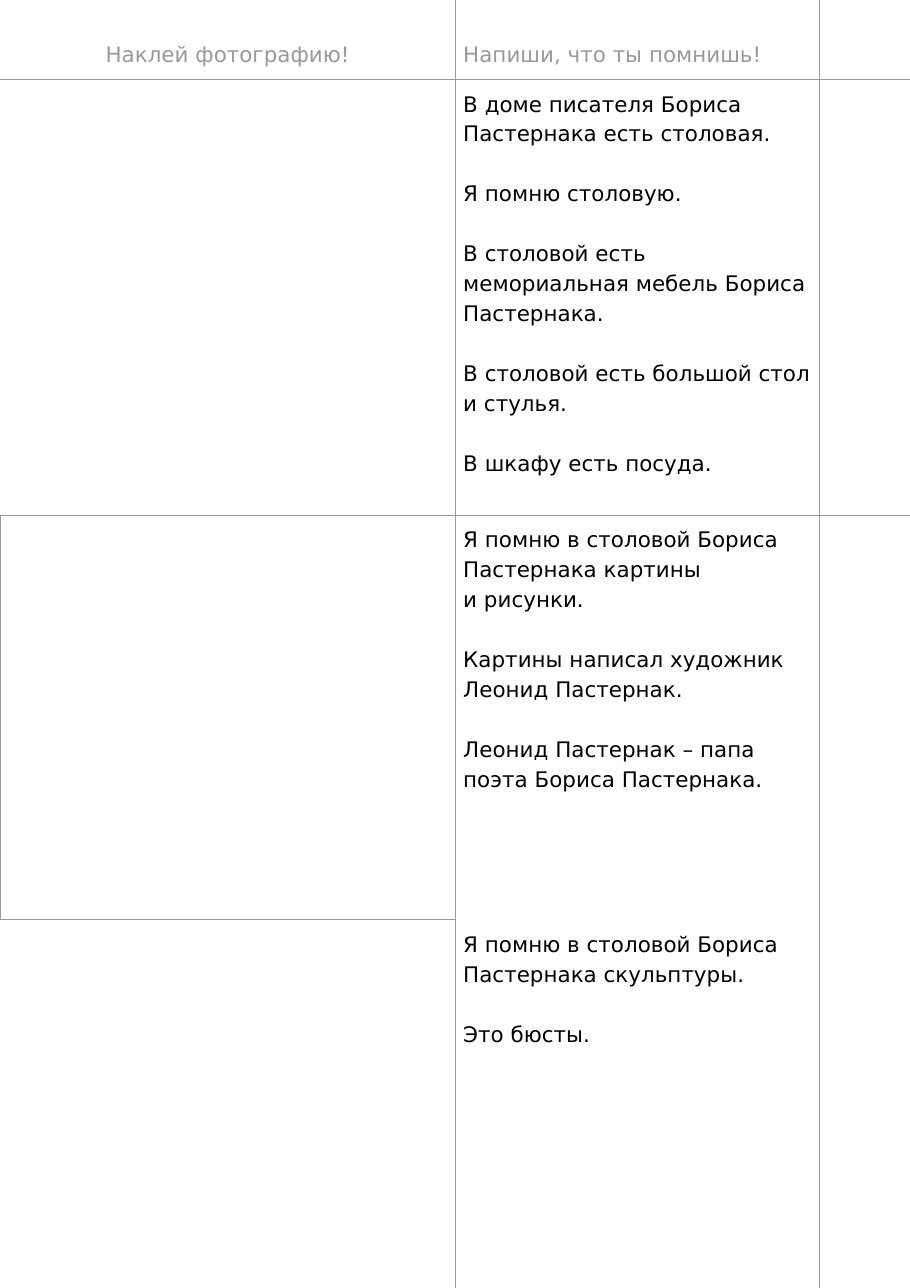
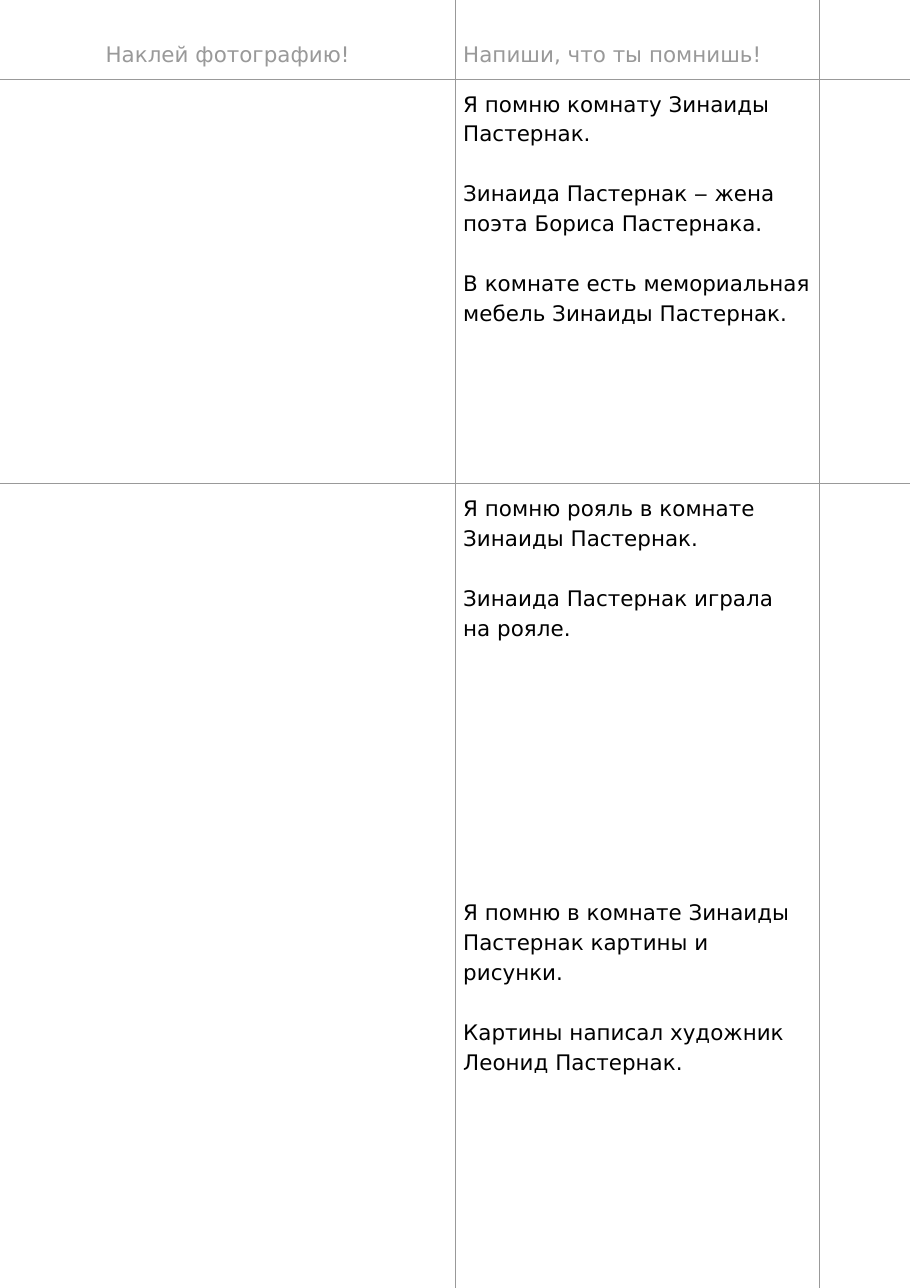
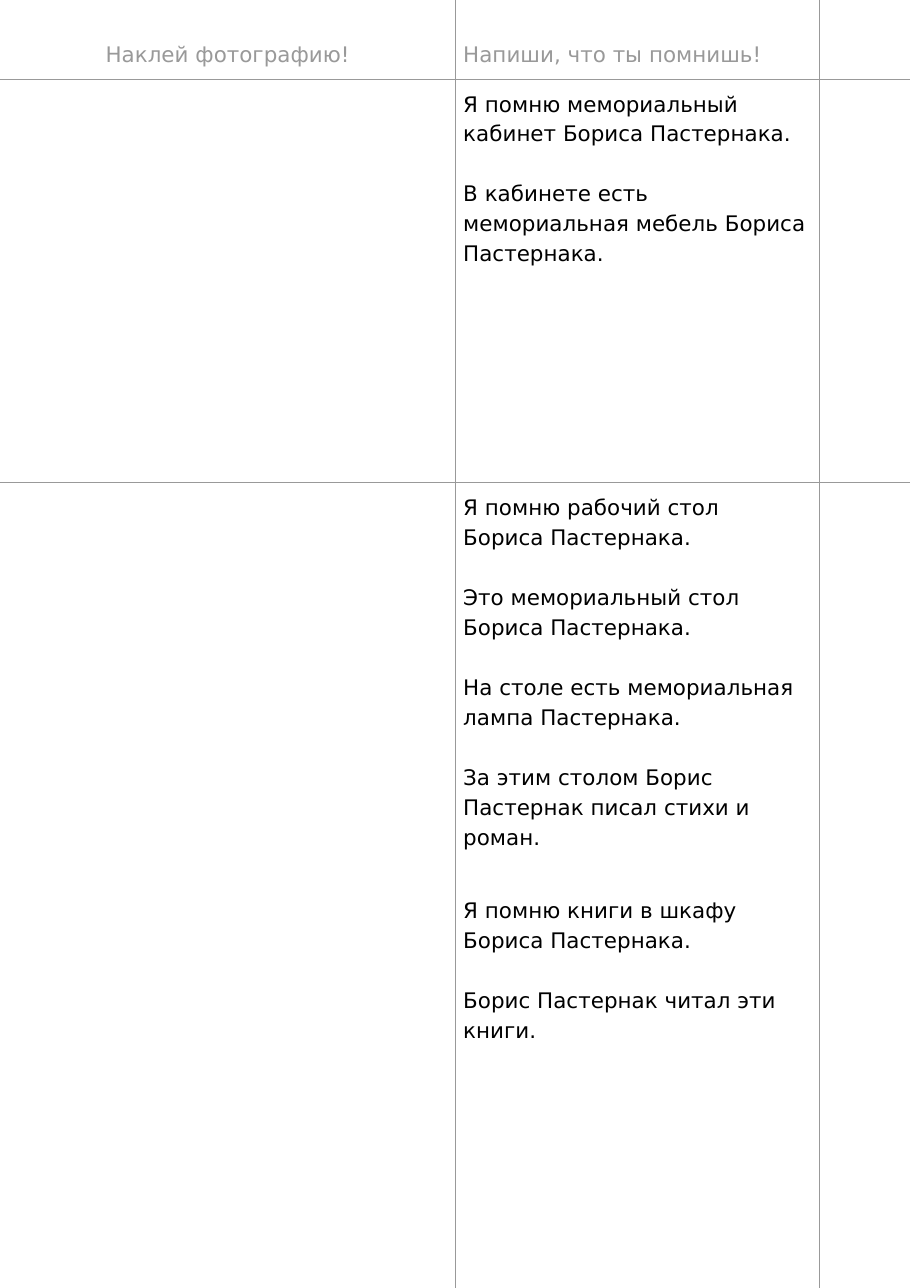
from dataclasses import dataclass

from lxml.etree import SubElement
from pptx import Presentation
from pptx.dml.color import RGBColor
from pptx.enum.text import PP_ALIGN
from pptx.oxml.ns import qn
from pptx.util import Cm, Pt


@dataclass(frozen=True)
class Theme:
    font: str = "DejaVu Sans"
    size: Pt = Pt(14)
    leading: Pt = Pt(19.6)
    ink: str = "000000"
    grey: str = "999999"
    paper: str = "FFFFFF"
    rule: Pt = Pt(0.53)
    inset: Cm = Cm(0.18)


THEME = Theme()
PAGE_W, PAGE_H = Cm(20.98), Cm(29.69)
PHOTO_W, NOTES_W = Cm(10.5), Cm(8.4)
HEADER_H = Cm(1.83)
HEADINGS = ("Наклей фотографию!", "Напиши, что ты помнишь!")

# heights: the first two note rows; the third runs to the foot of the page.
# framed: whether the second photo cell has a full frame.
PAGES = [
    {
        "heights": (Cm(10.05), Cm(9.32)),
        "framed": True,
        "notes": [
            ["В доме писателя Бориса Пастернака есть столовая.",
             "Я помню столовую.",
             "В столовой есть мемориальная мебель Бориса Пастернака.",
             "В столовой есть большой стол\nи стулья.",
             "В шкафу есть посуда."],
            ["Я помню в столовой Бориса Пастернака картины\nи рисунки.",
             "Картины написал художник Леонид Пастернак.",
             "Леонид Пастернак – папа поэта Бориса Пастернака."],
            ["Я помню в столовой Бориса Пастернака скульптуры.",
             "Это бюсты."],
        ],
    },
    {
        "heights": (Cm(9.32), Cm(9.32)),
        "framed": False,
        "notes": [
            ["Я помню комнату Зинаиды Пастернак.",
             "Зинаида Пастернак ‒ жена поэта Бориса Пастернака.",
             "В комнате есть мемориальная мебель Зинаиды Пастернак."],
            ["Я помню рояль в комнате\nЗинаиды Пастернак.",
             "Зинаида Пастернак играла\nна рояле."],
            ["Я помню в комнате Зинаиды Пастернак картины и рисунки.",
             "Картины написал художник Леонид Пастернак."],
        ],
    },
    {
        "heights": (Cm(9.3), Cm(9.3)),
        "framed": False,
        "notes": [
            ["Я помню мемориальный кабинет Бориса Пастернака.",
             "В кабинете есть мемориальная мебель Бориса Пастернака."],
            ["Я помню рабочий стол\nБориса Пастернака.",
             "Это мемориальный стол\nБориса Пастернака.",
             "На столе есть мемориальная лампа Пастернака.",
             "За этим столом Борис Пастернак писал стихи и роман."],
            ["Я помню книги в шкафу Бориса Пастернака.",
             "Борис Пастернак читал эти книги."],
        ],
    },
]


def ruled_sides(row, col, framed):
    """Return the sides of a cell that carry a grey rule."""
    sides = set()
    if col > 0:
        sides.add("L")
    if col < 2:
        sides.add("R")
    if row in (1, 2):
        sides.add("T")
    if row in (0, 1):
        sides.add("B")
    if framed and col == 0:
        if row == 2:
            sides |= {"L", "B"}
        elif row == 3:
            sides.add("T")
    return sides


def style_cell(cell, sides):
    cell.fill.solid()
    cell.fill.fore_color.rgb = RGBColor.from_string(THEME.paper)
    cell.margin_left = cell.margin_right = THEME.inset
    cell.margin_top = cell.margin_bottom = THEME.inset
    tcPr = cell._tc.get_or_add_tcPr()
    for i, side in enumerate("LRTB"):
        ln = SubElement(tcPr, qn(f"a:ln{side}"))
        if side in sides:
            ln.set("w", str(int(THEME.rule)))
            fill = SubElement(ln, qn("a:solidFill"))
            SubElement(fill, qn("a:srgbClr")).set("val", THEME.grey)
        else:
            SubElement(ln, qn("a:noFill"))
        tcPr.insert(i, ln)


def write(cell, sentences, color, align=PP_ALIGN.LEFT):
    """Write one paragraph per sentence, a line apart; a newline breaks the line."""
    tf = cell.text_frame
    for i, sentence in enumerate(sentences):
        p = tf.add_paragraph() if i else tf.paragraphs[0]
        p.alignment = align
        p.line_spacing = THEME.leading
        if i:
            p.space_before = THEME.leading
        for j, line in enumerate(sentence.split("\n")):
            if j:
                p.add_line_break()
            r = p.add_run()
            r.text = line
            r.font.name = THEME.font
            r.font.size = THEME.size
            r.font.color.rgb = RGBColor.from_string(color)


def add_page(prs, page):
    s = prs.slides.add_slide(prs.slide_layouts[6])
    heights = [HEADER_H, *page["heights"]]
    heights.append(PAGE_H - sum(heights))
    widths = [PHOTO_W, NOTES_W, PAGE_W - PHOTO_W - NOTES_W]
    table = s.shapes.add_table(len(heights), len(widths), 0, 0, PAGE_W, PAGE_H).table
    table.first_row = table.horz_banding = False
    for column, width in zip(table.columns, widths):
        column.width = width
    for i, height in enumerate(heights):
        table.rows[i].height = height
        for j in range(len(widths)):
            style_cell(table.cell(i, j), ruled_sides(i, j, page["framed"]))

    for j, (heading, align) in enumerate(zip(HEADINGS, (PP_ALIGN.CENTER, PP_ALIGN.LEFT))):
        cell = table.cell(0, j)
        cell.margin_top = THEME.inset + THEME.leading
        write(cell, [heading], THEME.grey, align)
    for i, sentences in enumerate(page["notes"], start=1):
        write(table.cell(i, 1), sentences, THEME.ink)


def main():
    prs = Presentation()
    prs.slide_width, prs.slide_height = PAGE_W, PAGE_H
    for page in PAGES:
        add_page(prs, page)
    prs.save("out.pptx")


if __name__ == "__main__":
    main()
